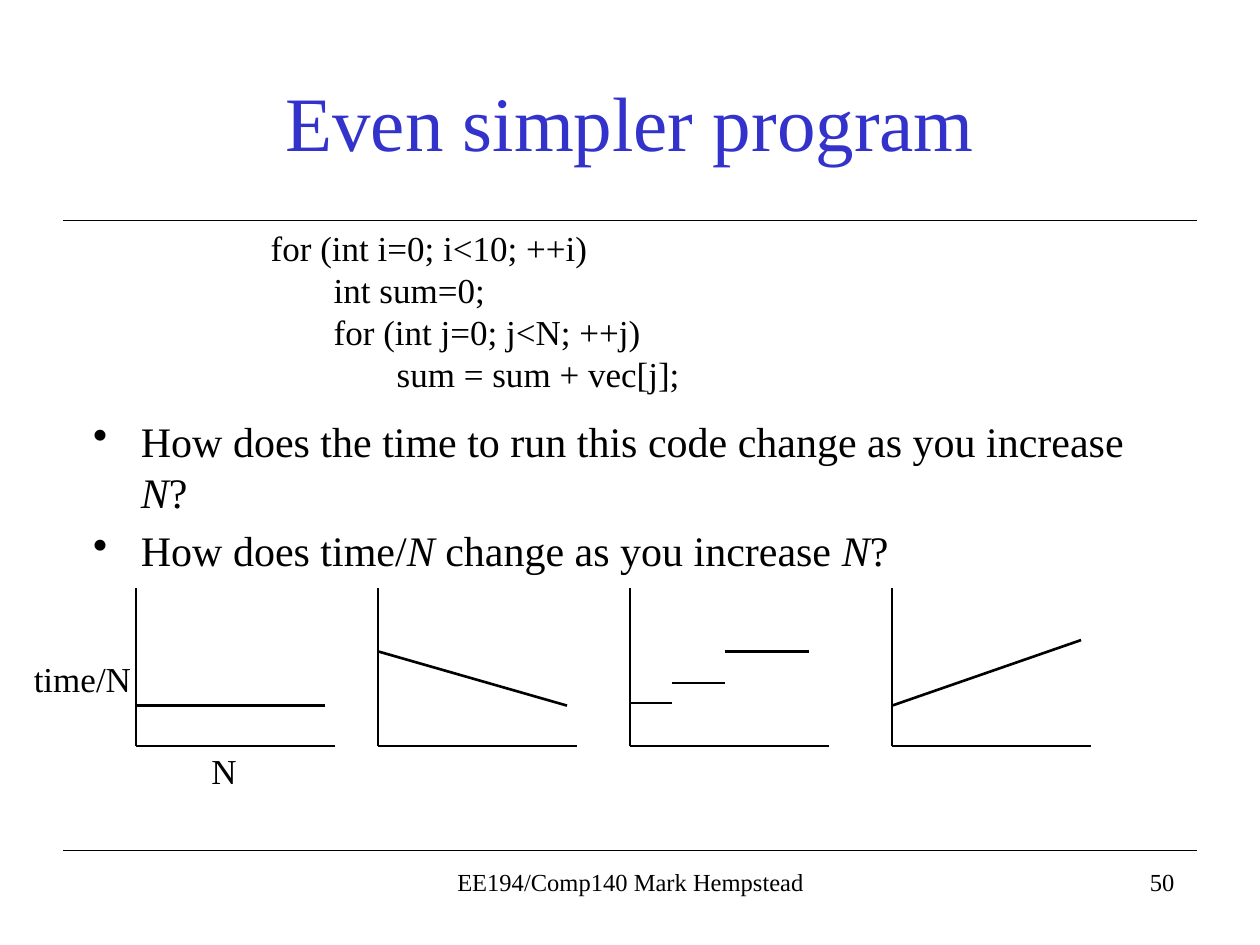
from dataclasses import dataclass

from lxml.etree import SubElement
from pptx import Presentation
from pptx.dml.color import RGBColor
from pptx.enum.shapes import MSO_CONNECTOR
from pptx.enum.text import MSO_ANCHOR, MSO_AUTO_SIZE, PP_ALIGN
from pptx.oxml.ns import qn
from pptx.util import Inches, Pt


@dataclass(frozen=True)
class Theme:
    font: str = "Times New Roman"
    ink: RGBColor = RGBColor(0x00, 0x00, 0x00)
    title_color: RGBColor = RGBColor(0x33, 0x33, 0xCC)
    title_size: int = 44
    bullet_size: int = 24
    code_size: int = 20
    footer_size: int = 14
    rule_width: float = 0.75
    graph_width: float = 1.5


class SlideBuilder:
    def __init__(self, slide, theme):
        self.slide = slide
        self.theme = theme

    def run(self, paragraph, text, size, color=None, italic=False):
        run = paragraph.add_run()
        run.text = text
        font = run.font
        font.name, font.size, font.italic = self.theme.font, Pt(size), italic
        font.color.rgb = color or self.theme.ink

    def title(self, text, left, top, width, height):
        title = self.slide.shapes.title
        title.left, title.top = Inches(left), Inches(top)
        title.width, title.height = Inches(width), Inches(height)
        frame = title.text_frame
        frame.auto_size = MSO_AUTO_SIZE.NONE
        frame.vertical_anchor = MSO_ANCHOR.MIDDLE
        paragraph = frame.paragraphs[0]
        paragraph.alignment = PP_ALIGN.CENTER
        self.run(paragraph, text, self.theme.title_size, self.theme.title_color)

    def paragraphs(self, left, top, width, height, count):
        """Add a text box and return its given number of empty paragraphs."""
        box = self.slide.shapes.add_textbox(
            Inches(left), Inches(top), Inches(width), Inches(height))
        frame = box.text_frame
        frame.word_wrap = True
        for _ in range(count - 1):
            frame.add_paragraph()
        return frame.paragraphs

    def label(self, text, left, top, width, height, size, align=PP_ALIGN.LEFT):
        paragraph = self.paragraphs(left, top, width, height, 1)[0]
        paragraph.alignment = align
        self.run(paragraph, text, size)

    def code(self, lines, left, top, width, height):
        """Write (level, text) lines, indented half an inch per level."""
        rows = self.paragraphs(left, top, width, height, len(lines))
        for paragraph, (level, text) in zip(rows, lines):
            paragraph.level = level
            paragraph._p.get_or_add_pPr().set("marL", str(Inches(0.5 * level)))
            self.run(paragraph, text, self.theme.code_size)

    def bullets(self, items, left, top, width, height):
        """Write bullets; every second part of an item is italic."""
        size, hang = self.theme.bullet_size, Inches(0.38)
        rows = self.paragraphs(left, top, width, height, len(items))
        for paragraph, parts in zip(rows, items):
            paragraph.space_before = Pt(0.2 * size)
            properties = paragraph._p.get_or_add_pPr()
            properties.set("marL", str(hang))
            properties.set("indent", str(-hang))
            SubElement(properties, qn("a:buChar")).set("char", "•")
            for index, part in enumerate(parts):
                self.run(paragraph, part, size, italic=index % 2 == 1)

    def line(self, start, end, width):
        connector = self.slide.shapes.add_connector(
            MSO_CONNECTOR.STRAIGHT, *map(Inches, (*start, *end)))
        connector.line.color.rgb = self.theme.ink
        connector.line.width = Pt(width)
        SubElement(connector._element.spPr, qn("a:effectLst"))

    def graph(self, left, segments):
        """Draw two axes and segments whose x is measured from the y axis."""
        top, base, span = 4.67, 5.92, 1.58
        axes = [((0, top), (0, base)), ((0, base), (span, base))]
        for (x1, y1), (x2, y2) in axes + segments:
            self.line((left + x1, y1), (left + x2, y2), self.theme.graph_width)


CODE = [
    (0, "for (int i=0; i<10; ++i)"),
    (1, "int sum=0;"),
    (1, "for (int j=0; j<N; ++j)"),
    (2, "sum = sum + vec[j];"),
]
QUESTIONS = [
    ("How does the time to run this code change as you increase ", "N", "?"),
    ("How does time/", "N", " change as you increase ", "N", "?"),
]
GRAPHS = [
    (1.08, [((0, 5.6), (1.5, 5.6))]),
    (3, [((0, 5.17), (1.5, 5.6))]),
    (5, [((0, 5.58), (0.33, 5.58)),
         ((0.33, 5.42), (0.75, 5.42)),
         ((0.75, 5.17), (1.42, 5.17))]),
    (7.08, [((0, 5.6), (1.5, 5.08))]),
]


def main():
    presentation = Presentation()
    presentation.slide_width, presentation.slide_height = Inches(10), Inches(7.5)
    title_only = presentation.slide_layouts[5]
    theme = Theme()
    builder = SlideBuilder(presentation.slides.add_slide(title_only), theme)

    for rule_y in (6.75, 1.75):
        builder.line((0.5, rule_y), (9.5, rule_y), theme.rule_width)
    builder.title("Even simpler program", 0.75, 0.33, 8.5, 1.25)
    builder.bullets(QUESTIONS, 0.64, 3.25, 8.83, 0.92)
    builder.code(CODE, 2.05, 1.75, 6.95, 1.45)

    for left, segments in GRAPHS:
        builder.graph(left, segments)
    builder.label("time/N", 0.17, 5.17, 1, 0.44, theme.code_size)
    builder.label("N", 1.58, 5.9, 0.42, 0.44, theme.code_size)

    builder.label("EE194/Comp140 Mark Hempstead", 3.42, 6.83, 3.17, 0.5,
                  theme.footer_size, PP_ALIGN.CENTER)
    builder.label("50", 6.25, 6.83, 3.17, 0.5, theme.footer_size, PP_ALIGN.RIGHT)
    presentation.save("out.pptx")


if __name__ == "__main__":
    main()
